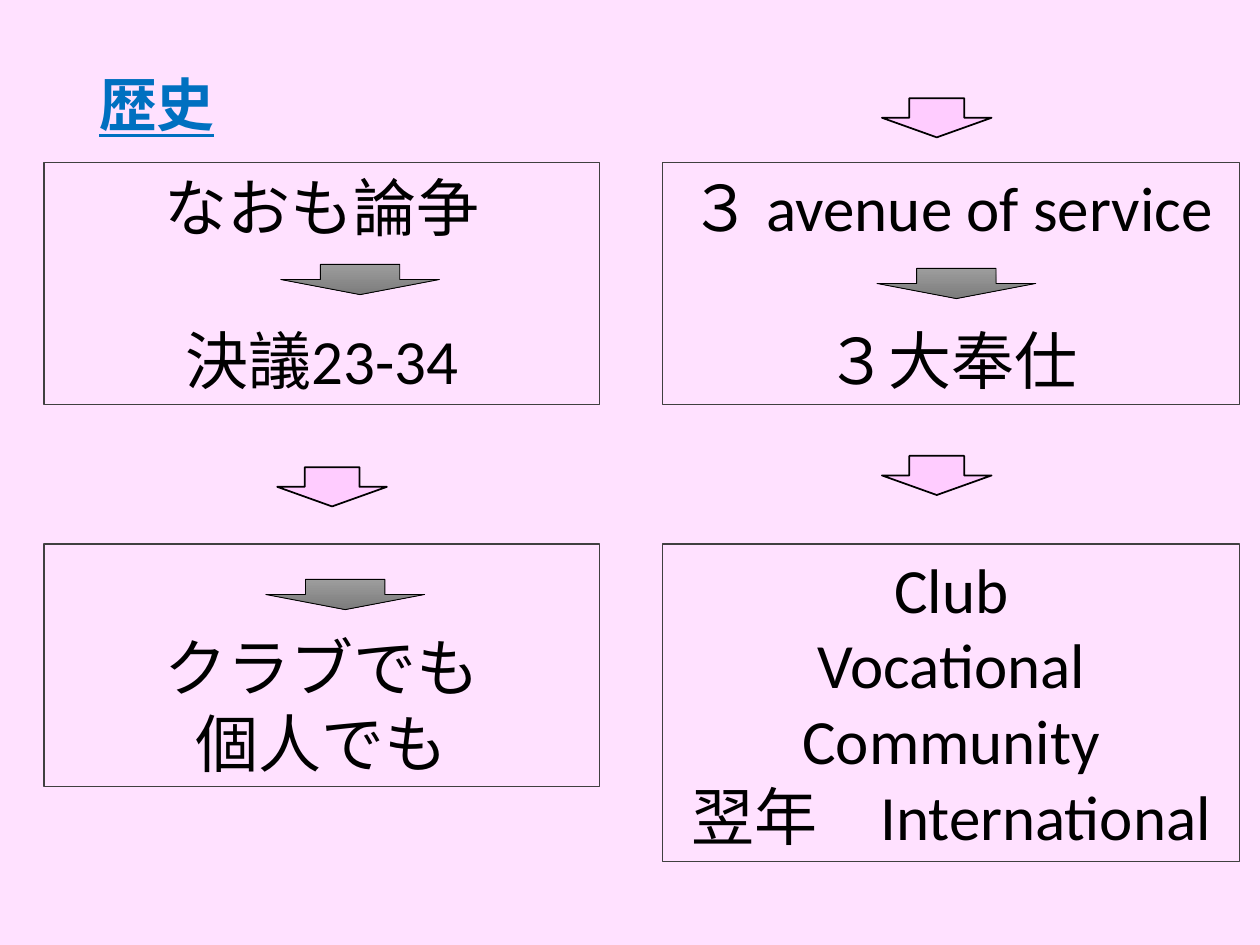
"""Build the history slide: four framed steps linked by down arrows."""
from pptx import Presentation
from pptx import util as u
from pptx.dml import color
from pptx.enum import shapes, text

COLORS = {"background": "FFE1FF", "heading": "0070C0", "body": "000000", "frame": "404040",
          "pale": "FFCCFF", "grey_top": "9D9D9D", "grey_bottom": "7C7C7C"}
FONT = "Calibri"
BODY_SIZE = 36
SKIPPED_LINE = 43.9
HEADING = "歴史"

COLUMNS = {"left": (0.89, 11.2), "right": (13.36, 11.63)}
ROWS = {"upper": 3.28, "lower": 10.97}
TOP, BOTTOM = text.MSO_ANCHOR.TOP, text.MSO_ANCHOR.BOTTOM
STEPS = [
    ("right", "upper", 4.88, TOP, SKIPPED_LINE, ["３ avenue of service", "３大奉仕"]),
    ("right", "lower", 6.4, TOP, 0, ["Club", "Vocational", "Community", "翌年\u3000International".replace("\u3000", "　")]),
    ("left", "upper", 4.88, TOP, SKIPPED_LINE, ["なおも論争", "決議23-34"]),
    ("left", "lower", 4.88, BOTTOM, 0, ["クラブでも", "個人でも"]),
]
STEP_ARROWS = [(5.59, 9.42), (17.78, 1.98), (17.78, 9.19)]
INNER_ARROWS = [(5.36, 11.68), (17.68, 5.41), (5.66, 5.33)]


def rgb(name):
    return color.RGBColor.from_string(COLORS[name])


def add_outlined(slide, kind, left, top, width, height, line, weight):
    outlined = slide.shapes.add_shape(kind, u.Cm(left), u.Cm(top), u.Cm(width), u.Cm(height))
    outlined.shadow.inherit = False
    outlined.line.color.rgb = rgb(line)
    outlined.line.width = u.Pt(weight)
    return outlined


def write_lines(frame, lines, size, ink, align, gap=0):
    frame.word_wrap = True
    for index, line in enumerate(lines):
        paragraph = frame.add_paragraph() if index else frame.paragraphs[0]
        paragraph.text = line
        paragraph.alignment = align
        paragraph.font.name = FONT
        paragraph.font.size = u.Pt(size)
        paragraph.font.color.rgb = rgb(ink)
        if index and gap:
            paragraph.space_before = u.Pt(gap)


def add_heading(slide):
    heading = slide.shapes.add_textbox(u.Cm(1.75), u.Cm(1.02), u.Cm(21.89), u.Cm(2.31))
    frame = heading.text_frame
    frame.vertical_anchor = text.MSO_ANCHOR.MIDDLE
    write_lines(frame, [HEADING], 33, "heading", text.PP_ALIGN.LEFT)
    paragraph = frame.paragraphs[0]
    paragraph.line_spacing = 0.9
    paragraph.font.bold = True
    paragraph.font.underline = True


def add_step(slide, column, row, height, anchor, gap, lines):
    left, width = COLUMNS[column]
    step = add_outlined(slide, shapes.MSO_SHAPE.RECTANGLE, left, ROWS[row], width, height,
                        "frame", 0.75)
    step.fill.background()
    step.text_frame.vertical_anchor = anchor
    write_lines(step.text_frame, lines, BODY_SIZE, "body", text.PP_ALIGN.CENTER, gap)


def main():
    deck = Presentation()
    deck.slide_width, deck.slide_height = u.Cm(25.4), u.Cm(19.05)
    slide = deck.slides.add_slide(deck.slide_layouts[6])
    slide.background.fill.solid()
    slide.background.fill.fore_color.rgb = rgb("background")

    add_heading(slide)
    for left, top in STEP_ARROWS:
        arrow = add_outlined(slide, shapes.MSO_SHAPE.DOWN_ARROW, left, top, 2.21, 0.79, "body", 1)
        arrow.fill.solid()
        arrow.fill.fore_color.rgb = rgb("pale")
    for step in STEPS:
        add_step(slide, *step)
    for left, top in INNER_ARROWS:
        arrow = add_outlined(slide, shapes.MSO_SHAPE.DOWN_ARROW, left, top, 3.2, 0.61, "body", 0.5)
        arrow.fill.gradient()
        arrow.fill.gradient_angle = 270
        for stop, shade in zip(arrow.fill.gradient_stops, ("grey_top", "grey_bottom")):
            stop.color.rgb = rgb(shade)

    deck.save("out.pptx")


if __name__ == "__main__":
    main()
